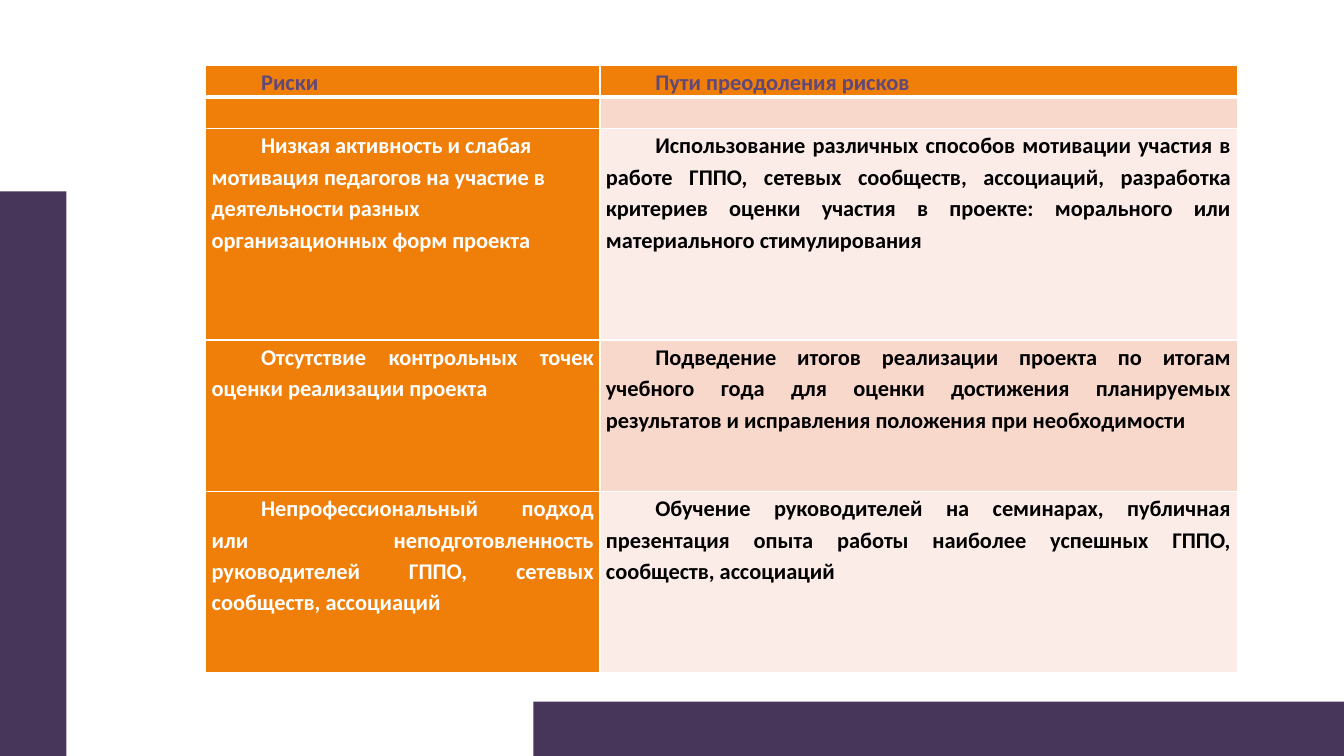
from lxml.etree import SubElement
from pptx import Presentation
from pptx.dml.color import RGBColor
from pptx.enum.shapes import MSO_SHAPE as Shape
from pptx.enum.text import PP_ALIGN as Align
from pptx.oxml.ns import qn
from pptx.util import Inches, Pt

PLUM, ORANGE, WHITE, BLACK = "48365A", "F07F09", "FFFFFF", "000000"
HEADING, BLUSH, PALE = "604878", "F9D8CC", "FCECE7"
COLUMNS = [3.91, 6.32]
ROWS = [0.31, 0.31, 2.1, 1.5, 1.8]

RISKS = [
    ("Риски", "Пути преодоления рисков"),
    ("", ""),
    ("Низкая активность и слабая мотивация педагогов на участие в "
     "деятельности разных организационных форм проекта",
     "Использование различных способов мотивации участия в работе ГППО, "
     "сетевых сообществ, ассоциаций, разработка критериев оценки участия "
     "в проекте: морального или материального стимулирования"),
    ("Отсутствие контрольных точек оценки реализации проекта",
     "Подведение итогов реализации проекта по итогам учебного года для "
     "оценки достижения планируемых результатов и исправления положения "
     "при необходимости"),
    ("Непрофессиональный подход или неподготовленность руководителей ГППО, "
     "сетевых сообществ, ассоциаций",
     "Обучение руководителей на семинарах, публичная презентация опыта "
     "работы наиболее успешных ГППО, сообществ, ассоциаций"),
]


def paint(target, colour):
    target.solid()
    target.fore_color.rgb = RGBColor.from_string(colour)


def write(paragraph, text, colour=BLACK, size=16, font="Calibri", bold=True,
          align=Align.JUSTIFY, indent=0.49, spacing=1.15):
    paragraph.alignment = align
    paragraph.line_spacing = spacing
    properties = paragraph._p.get_or_add_pPr()
    properties.set("marL", "0")
    properties.set("indent", str(Inches(indent)))
    run = paragraph.add_run()
    run.text = text
    run.font.name, run.font.size, run.font.bold = font, Pt(size), bold
    paint(run.font.fill, colour)


class RiskSlide:
    def __init__(self, deck):
        self.slide = deck.slides.add_slide(deck.slide_layouts[6])
        self.edge = WHITE

    def bar(self, left, top, width, height, colour=PLUM):
        band = self.slide.shapes.add_shape(
            Shape.RECTANGLE, *map(Inches, (left, top, width, height)))
        band.shadow.inherit = False
        paint(band.fill, colour)
        band.line.fill.background()

    def border(self, cell, **widths):
        properties = cell._tc.get_or_add_tcPr()
        for side in "LRTB":
            line = SubElement(properties, qn(f"a:ln{side}"),
                              w=str(Pt(widths.get(side, 1))))
            fill = SubElement(line, qn("a:solidFill"))
            SubElement(fill, qn("a:srgbClr"), val=self.edge)

    def table(self, left, top, columns, rows, content):
        risks = self.slide.shapes.add_table(
            len(rows), len(columns), Inches(left), Inches(top),
            Inches(sum(columns)), Inches(sum(rows))).table
        for column, width in zip(risks.columns, columns):
            column.width = Inches(width)
        for r, (height, texts) in enumerate(zip(rows, content)):
            risks.rows[r].height = Inches(height)
            for c, text in enumerate(texts):
                self.cell(risks.cell(r, c), r, c, text)

    def cell(self, cell, r, c, text):
        self.border(cell, T=3 if r == 1 else 1, B=3 if r == 0 else 1)
        banding = BLUSH if r % 2 else PALE
        paint(cell.fill, ORANGE if r == 0 or c == 0 else banding)
        cell.margin_left = cell.margin_right = Inches(0.06)
        cell.margin_top = cell.margin_bottom = 0
        if text:
            ragged = c == 0 and r <= 2
            body = WHITE if c == 0 else BLACK
            write(cell.text_frame.paragraphs[0], text,
                  colour=HEADING if r == 0 else body,
                  align=Align.LEFT if ragged else Align.JUSTIFY)


def main():
    deck = Presentation()
    deck.slide_width, deck.slide_height = Inches(13.33), Inches(7.5)
    page = RiskSlide(deck)
    page.bar(5.29, 6.96, 8.04, 0.54)
    page.bar(0, 1.9, 0.66, 5.6)
    page.table(2.04, 0.65, COLUMNS, ROWS, RISKS)
    deck.save("out.pptx")


if __name__ == "__main__":
    main()
